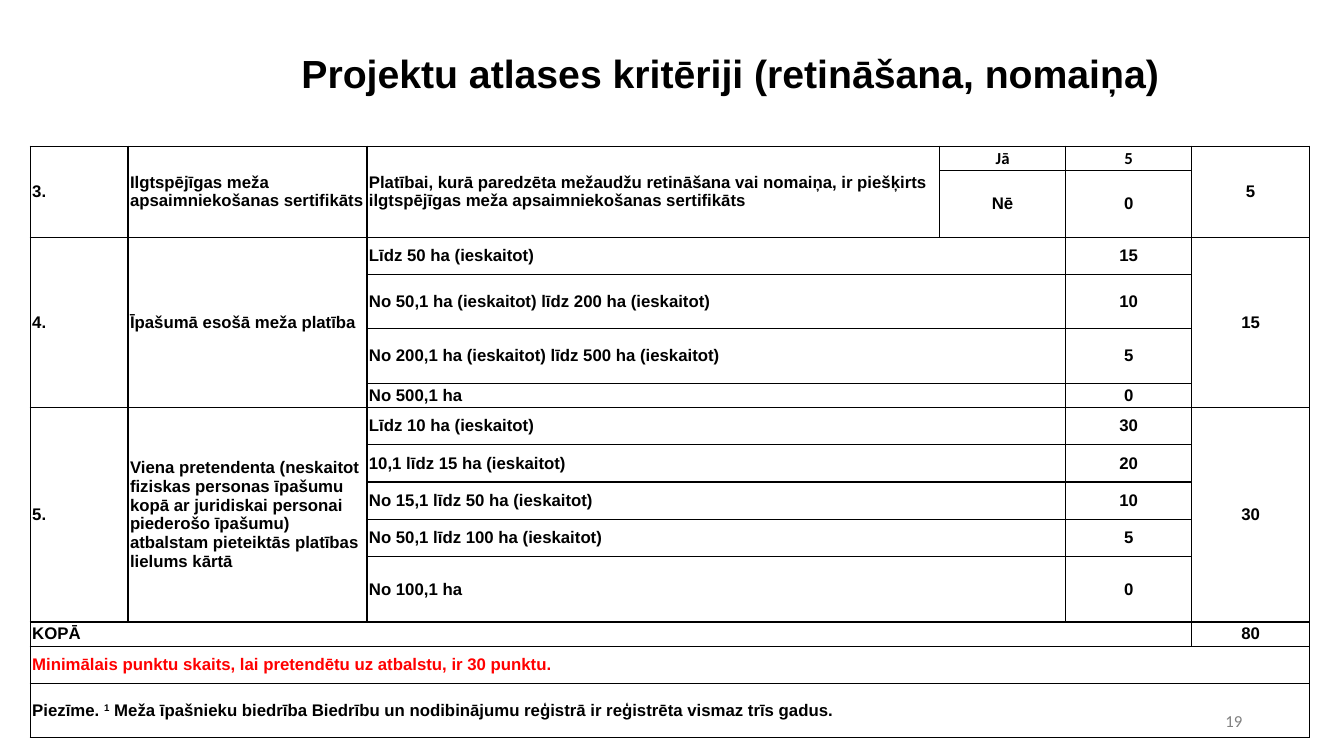
"""Build the slide with the project selection criteria table."""
from dataclasses import dataclass

from lxml.etree import SubElement
from pptx import Presentation
from pptx.dml.color import RGBColor
from pptx.enum.text import MSO_ANCHOR, MSO_AUTO_SIZE, PP_ALIGN
from pptx.oxml.ns import qn
from pptx.util import Emu, Pt

EMU_PER_PX = 9144
COLORS = {"text": "000000", "alert": "FF0000", "number": "808080", "border": "000000"}
COLUMN_WIDTHS = [97, 237, 568, 125, 125, 117]
ROW_HEIGHTS = [24, 66, 37, 54, 54, 24, 37, 37, 37, 37, 65, 24, 37, 54]
CELL_MARGIN = 2


@dataclass(frozen=True)
class Option:
    label: str
    points: str
    font: str = "Arial"


@dataclass(frozen=True)
class Criterion:
    number: str
    name: str
    options: list[Option]
    maximum: str
    condition: str = ""


CRITERIA = [
    Criterion(
        "3.", "Ilgtspējīgas meža apsaimniekošanas sertifikāts",
        [Option("Jā", "5", "Calibri"), Option("Nē", "0")], "5",
        "Platībai, kurā paredzēta mežaudžu retināšana vai nomaiņa, ir piešķirts "
        "ilgtspējīgas meža apsaimniekošanas sertifikāts",
    ),
    Criterion(
        "4.", "Īpašumā esošā meža platība",
        [
            Option("Līdz 50 ha (ieskaitot)", "15"),
            Option("No 50,1 ha (ieskaitot) līdz 200 ha (ieskaitot)", "10"),
            Option("No 200,1 ha (ieskaitot) līdz 500 ha (ieskaitot)", "5"),
            Option("No 500,1 ha", "0"),
        ], "15",
    ),
    Criterion(
        "5.",
        "Viena pretendenta (neskaitot fiziskas personas īpašumu kopā ar juridiskai "
        "personai piederošo īpašumu) atbalstam pieteiktās platības lielums kārtā",
        [
            Option("Līdz 10 ha (ieskaitot)", "30"),
            Option("10,1 līdz 15 ha (ieskaitot)", "20"),
            Option("No 15,1 līdz 50 ha (ieskaitot)", "10"),
            Option("No 50,1 līdz 100 ha (ieskaitot)", "5"),
            Option("No 100,1 ha", "0"),
        ], "30",
    ),
]


def px(length: int) -> Emu:
    return Emu(length * EMU_PER_PX)


def add_span(para, text: str, *, size: int = 12, font: str = "Arial",
             color: str = "text", bold: bool = True, baseline: int = 0) -> None:
    span = para.add_run()
    span.text = text
    span.font.size = Pt(size)
    span.font.name = font
    span.font.bold = bold
    span.font.color.rgb = RGBColor.from_string(COLORS[color])
    if baseline:
        span._r.get_or_add_rPr().set("baseline", str(baseline * 1000))


def style_cell(cell) -> None:
    cell.margin_left = cell.margin_right = px(CELL_MARGIN)
    cell.margin_top = cell.margin_bottom = px(CELL_MARGIN)
    cell.vertical_anchor = MSO_ANCHOR.MIDDLE
    properties = cell._tc.get_or_add_tcPr()
    for side in ("lnL", "lnR", "lnT", "lnB"):
        line = SubElement(properties, qn(f"a:{side}"), w=str(Pt(1)))
        fill = SubElement(line, qn("a:solidFill"))
        SubElement(fill, qn("a:srgbClr"), val=COLORS["border"])
    cell.fill.background()


def fill_cell(table, row: int, column: int, text: str, *, rows: int = 1,
              columns: int = 1, centered: bool = False, **text_format):
    cell = table.cell(row, column)
    if rows * columns > 1:
        cell.merge(table.cell(row + rows - 1, column + columns - 1))
    para = cell.text_frame.paragraphs[0]
    para.alignment = PP_ALIGN.CENTER if centered else PP_ALIGN.LEFT
    add_span(para, text, **text_format)
    return para


def add_criterion(table, top: int, criterion: Criterion) -> int:
    count = len(criterion.options)
    fill_cell(table, top, 0, criterion.number, rows=count)
    fill_cell(table, top, 1, criterion.name, rows=count)
    fill_cell(table, top, 5, criterion.maximum, rows=count, centered=True)
    if criterion.condition:
        fill_cell(table, top, 2, criterion.condition, rows=count)
    for row, option in enumerate(criterion.options, top):
        if criterion.condition:
            fill_cell(table, row, 3, option.label, centered=True, font=option.font)
        else:
            fill_cell(table, row, 2, option.label, columns=2, font=option.font)
        fill_cell(table, row, 4, option.points, centered=True, font=option.font)
    return top + count


def add_criteria_table(page) -> None:
    frame = page.shapes.add_table(
        len(ROW_HEIGHTS), len(COLUMN_WIDTHS), px(30), px(145),
        px(sum(COLUMN_WIDTHS)), px(sum(ROW_HEIGHTS)))
    table = frame.table
    table.first_row = table.horz_banding = False
    for column, width in zip(table.columns, COLUMN_WIDTHS):
        column.width = px(width)
    for row, height in zip(table.rows, ROW_HEIGHTS):
        row.height = px(height)
    for cell in table.iter_cells():
        style_cell(cell)

    row = 0
    for criterion in CRITERIA:
        row = add_criterion(table, row, criterion)
    fill_cell(table, row, 0, "KOPĀ", columns=5)
    fill_cell(table, row, 5, "80", centered=True)
    fill_cell(table, row + 1, 0,
              "Minimālais punktu skaits, lai pretendētu uz atbalstu, ir 30 punktu.",
              columns=6, color="alert")
    note = fill_cell(table, row + 2, 0, "Piezīme. ", columns=6)
    add_span(note, "1", baseline=30)
    add_span(note, " Meža īpašnieku biedrība Biedrību un nodibinājumu reģistrā ir "
                   "reģistrēta vismaz trīs gadus.")


def place_text(box, text: str, bounds: tuple[int, int, int, int],
               alignment: PP_ALIGN, **text_format):
    box.left, box.top, box.width, box.height = map(px, bounds)
    frame = box.text_frame
    frame.word_wrap = True
    frame.auto_size = MSO_AUTO_SIZE.NONE
    frame.vertical_anchor = MSO_ANCHOR.MIDDLE
    para = frame.paragraphs[0]
    para.alignment = alignment
    add_span(para, text, **text_format)
    return para


def main() -> None:
    deck = Presentation()
    deck.slide_width, deck.slide_height = px(1333), px(750)
    page = deck.slides.add_slide(deck.slide_layouts[5])
    title = place_text(page.shapes.title, "Projektu atlases kritēriji (retināšana, nomaiņa)",
                       (289, 25, 904, 100), PP_ALIGN.LEFT, size=28)
    title.line_spacing = 0.9
    number_box = page.shapes.add_textbox(0, 0, 0, 0)
    place_text(number_box, "19", (942, 695, 300, 40), PP_ALIGN.RIGHT,
               font="Calibri", color="number", bold=False)
    add_criteria_table(page)
    deck.save("out.pptx")


if __name__ == "__main__":
    main()
